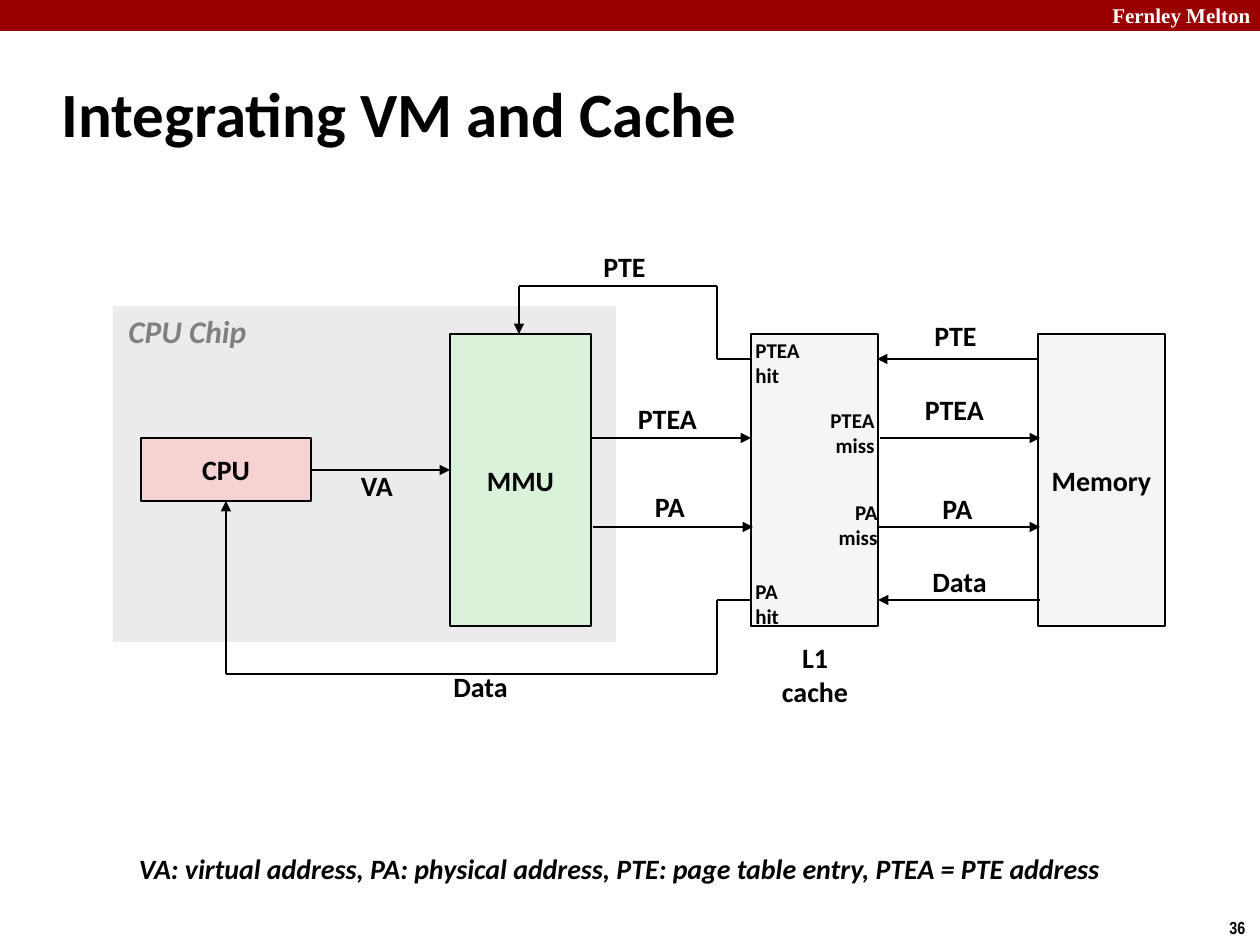
from dataclasses import dataclass
from lxml.etree import SubElement
from pptx import Presentation
from pptx.dml.color import RGBColor
from pptx.enum.shapes import MSO_CONNECTOR as Link, MSO_SHAPE as Kind
from pptx.enum.text import MSO_ANCHOR as Anchor, MSO_AUTO_SIZE as Fit, PP_ALIGN as Align
from pptx.oxml.ns import qn
from pptx.util import Emu, Pt


@dataclass(frozen=True)
class Theme:
    ink: str = "000000"
    paper: str = "FFFFFF"
    band: str = "990000"
    chip: str = "EBEBEB"
    dim: str = "808080"
    rose: str = "F6D2D2"
    mint: str = "DBF2DA"
    pale: str = "F5F5F5"
    sans: str = "Calibri"
    serif: str = "Times New Roman"
    thin: str = "Arial Narrow"
    title: int = 36
    head: int = 18
    body: int = 16
    note: int = 12
    page: int = 10


look = Theme()
SCALE = 914400 / 126


def px(n):
    return Emu(round(n * SCALE))


def shift(box, x, y, w, h):
    return box[0] + x, box[1] + y, w, h


def write(shape, lines, size, color=look.ink, font=look.sans, align=Align.LEFT,
          italic=False, anchor=Anchor.TOP, wrap=False, space=None, pad=None):
    frame = shape.text_frame
    frame.word_wrap = wrap
    frame.vertical_anchor = anchor
    if pad:
        frame.margin_left = frame.margin_right = px(pad[0])
        frame.margin_top = frame.margin_bottom = px(pad[1])
    for i, line in enumerate(lines):
        para = frame.add_paragraph() if i else frame.paragraphs[0]
        para.alignment = align
        if space:
            para.line_spacing = space
        run = para.add_run()
        run.text = line
        run.font.name, run.font.size = font, Pt(size)
        run.font.bold, run.font.italic = True, italic
        run.font.color.rgb = RGBColor.from_string(color)


def label(slide, box, lines, size, **style):
    text = slide.shapes.add_textbox(*map(px, box))
    write(text, lines, size, **style)
    text.text_frame.auto_size = Fit.SHAPE_TO_FIT_TEXT


def tight(slide, box, line, **style):
    label(slide, box, [line], look.body, space=0.85, pad=(9, 4), **style)


def block(slide, box, fill, line=None, text=None):
    shape = slide.shapes.add_shape(Kind.RECTANGLE, *map(px, box))
    shape.shadow.inherit = False
    shape.fill.solid()
    shape.fill.fore_color.rgb = RGBColor.from_string(fill)
    if line:
        shape.line.color.rgb = RGBColor.from_string(line)
        shape.line.width = Pt(1)
    else:
        shape.line.fill.background()
    if text:
        write(shape, [text], look.body, align=Align.CENTER, anchor=Anchor.MIDDLE)


def wire(slide, box, points):
    spots = [(px(box[0] + x), px(box[1] + y)) for x, y in points]
    for i, (start, end) in enumerate(zip(spots, spots[1:]), 2):
        link = slide.shapes.add_connector(Link.STRAIGHT, *start, *end)
        link.line.color.rgb = RGBColor.from_string(look.ink)
        link.line.width = Pt(1)
        if i == len(spots):
            SubElement(link.line._get_or_add_ln(), qn("a:tailEnd"), type="triangle")
        SubElement(link._element.spPr, qn("a:effectLst"))


def banner(slide, box):
    block(slide, box, look.band)
    label(slide, shift(box, 1023, -4, 240, 38), ["Fernley Melton"], look.note,
          color=look.paper, font=look.serif, align=Align.RIGHT, wrap=True)


def title(slide, box):
    text = slide.shapes.add_textbox(*map(px, box))
    write(text, ["Integrating VM and Cache"], look.title, anchor=Anchor.MIDDLE, wrap=True)


def chart(slide, box):
    top, tall, wide = 91, 292, 127
    cpu, mmu, cache, mem = 28, 337, 638, 925
    out, back = mmu + 141, cache + wide
    block(slide, shift(box, 0, 63, 503, 336), look.chip)
    label(slide, shift(box, 3, 63, 152, 50), ["CPU Chip"], look.head,
          color=look.dim, italic=True)
    for x, y, w, h, fill, name in (
        (cpu, 195, 170, 63, look.rose, "CPU"),
        (mmu, top, 141, tall, look.mint, "MMU"),
        (cache, top, wide, tall, look.pale, None),
        (mem, top, wide, tall, look.pale, "Memory"),
    ):
        block(slide, shift(box, x, y, w, h), fill, look.ink, name)

    entry, ask, fetch, data = 116, 195, 284, 357
    bend, mid, port = 604, 113, 406
    for points in (
        [(cpu + 170, 227), (mmu, 227)],
        [(out, ask), (cache, ask)],
        [(out + 2, fetch), (cache + 2, fetch)],
        [(back + 2, ask), (mem + 2, ask)],
        [(back, fetch), (mem + 2, fetch)],
        [(mem, entry), (back - 1, entry)],
        [(mem + 2, data), (back, data)],
        [(cache, entry), (bend, entry), (bend, 43), (port, 43), (port, top)],
        [(cache, data), (bend, data), (bend, 431), (mid, 431), (mid, 258)],
    ):
        wire(slide, box, points)

    for name, x, y, w in (("VA", 239, 227, 53), ("PTEA", 516, 160, 78),
                          ("PA", 533, 248, 48), ("PTEA", 803, 151, 78)):
        tight(slide, shift(box, x, y, w, 37), name)
    for name, x, y, w in (("PTE", 478, 0, 68), ("Data", 328, 420, 81),
                          ("PA", 817, 242, 55), ("Data", 807, 315, 81),
                          ("PTE", 809, 69, 68)):
        label(slide, shift(box, x, y, w, 47), [name], look.body, anchor=Anchor.MIDDLE)
    for lines, x, y, w, h, size, align in (
        (("PTEA", "hit"), 630, 88, 69, 63, look.note, Align.LEFT),
        (("PTEA", "miss"), 705, 158, 69, 63, look.note, Align.RIGHT),
        (("PA", "miss"), 711, 250, 66, 63, look.note, Align.RIGHT),
        (("PA", "hit"), 630, 329, 49, 63, look.note, Align.LEFT),
        (("L1", "cache"), 656, 391, 92, 81, look.body, Align.CENTER),
    ):
        label(slide, shift(box, x, y, w, h), lines, size, align=align,
              anchor=Anchor.MIDDLE)


def legend(slide, box):
    tight(slide, box, "VA: virtual address, PA: physical address, "
          "PTE: page table entry, PTEA = PTE address", italic=True)


def footer(slide, box):
    label(slide, box, ["36"], look.page, font=look.thin)


def main():
    deck = Presentation()
    deck.slide_width, deck.slide_height = px(1260), px(945)
    slide = deck.slides.add_slide(deck.slide_layouts[6])
    banner(slide, (0, 0, 1260, 31))
    title(slide, (49, 60, 1046, 105))
    chart(slide, (113, 243, 1052, 472))
    legend(slide, (130, 853, 998, 37))
    footer(slide, (1217, 911, 43, 34))
    deck.save("out.pptx")


if __name__ == "__main__":
    main()
